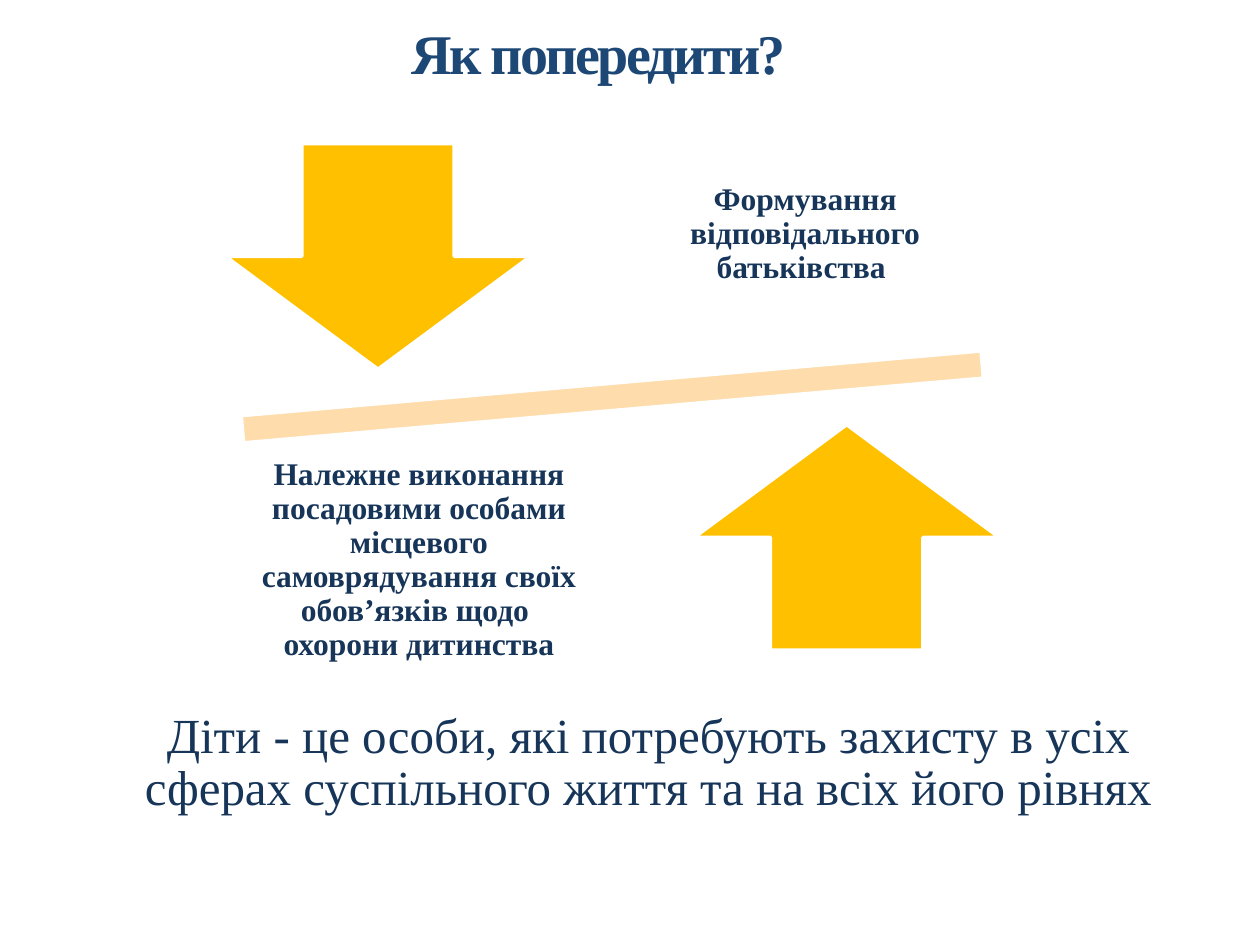
from lxml.etree import SubElement
from pptx import Presentation
from pptx.dml.color import RGBColor
from pptx.enum.shapes import MSO_SHAPE
from pptx.enum.text import MSO_ANCHOR, PP_ALIGN
from pptx.oxml.ns import qn
from pptx.util import Inches, Pt

FONT = "Times New Roman"
NAVY, BLUE, GOLD, PEACH, WHITE = "163558", "1D4775", "FFC000", "FFDCAB", "FFFFFF"


def rgb(color):
    """Turn a hex string into a colour."""
    return RGBColor.from_string(color)


def place(sp, left, top, width, height):
    """Move and size a shape in inches."""
    sp.left, sp.top = Inches(left), Inches(top)
    sp.width, sp.height = Inches(width), Inches(height)


def write(sp, text, size, color=NAVY, bold=False, anchor=MSO_ANCHOR.TOP, inset=(0, 0)):
    """Write one centred paragraph and return its run."""
    tf = sp.text_frame
    tf.word_wrap = True
    tf.vertical_anchor = anchor
    tf.margin_left = tf.margin_right = Inches(inset[0])
    tf.margin_top = tf.margin_bottom = Inches(inset[1])
    p = tf.paragraphs[0]
    p.alignment = PP_ALIGN.CENTER
    p.line_spacing = 0.9
    p.space_before = Pt(0)
    r = p.add_run()
    r.text = text
    r.font.name, r.font.size, r.font.bold = FONT, Pt(size), bold
    r.font.color.rgb = rgb(color)
    return r


def add_title(s, text):
    """Fill the title placeholder with tightly spaced letters."""
    sp = s.shapes.title
    place(sp, 0.83, 0.21, 7.84, 1.27)
    r = write(sp, text, 32, BLUE, True)
    r.font._element.set("spc", "-150")


def add_body(s, text):
    """Fill the body placeholder without a bullet."""
    sp = s.placeholders[1]
    place(sp, 0.85, 5.64, 8.59, 0.85)
    pPr = sp.text_frame.paragraphs[0]._p.get_or_add_pPr()
    pPr.set("marL", "0")
    pPr.set("indent", "0")
    SubElement(pPr, qn("a:buNone"))
    write(sp, text, 28, inset=(0.02, 0))


def add_figure(s, kind, left, top, width, height, color, rotation=0):
    """Add a filled shape with a white outline."""
    sp = s.shapes.add_shape(kind, Inches(left), Inches(top), Inches(width), Inches(height))
    sp.shadow.inherit = False
    sp.rotation = rotation
    sp.fill.solid()
    sp.fill.fore_color.rgb = rgb(color)
    sp.line.color.rgb = rgb(WHITE)
    sp.line.width = Pt(2)


def add_label(s, text, left, top, width):
    """Add a bold label centred in its box."""
    sp = s.shapes.add_textbox(Inches(left), Inches(top), Inches(width), Inches(1.88))
    write(sp, text, 18, bold=True, anchor=MSO_ANCHOR.MIDDLE, inset=(0.14, 0.14))


def main():
    """Build the slide and save it."""
    prs = Presentation()
    prs.slide_width, prs.slide_height = Inches(10), Inches(7.5)
    s = prs.slides.add_slide(prs.slide_layouts[1])
    add_title(s, "Як попередити?")
    add_body(s, "Діти - це особи, які потребують захисту в усіх сферах "
                "суспільного життя та на всіх його рівнях")
    add_figure(s, MSO_SHAPE.MATH_MINUS, 0.85, 2.69, 8.02, 0.92, PEACH, 355)
    add_figure(s, MSO_SHAPE.DOWN_ARROW, 1.79, 1.14, 2.42, 1.79, GOLD)
    add_label(s, "Формування відповідального батьківства ", 5.1, 0.92, 2.58)
    add_figure(s, MSO_SHAPE.UP_ARROW, 5.51, 3.37, 2.42, 1.79, GOLD)
    add_label(s, "Належне виконання посадовими особами місцевого самоврядування "
                 "своїх обов’язків щодо  охорони дитинства", 1.85, 3.51, 2.95)
    prs.save("out.pptx")


if __name__ == "__main__":
    main()
